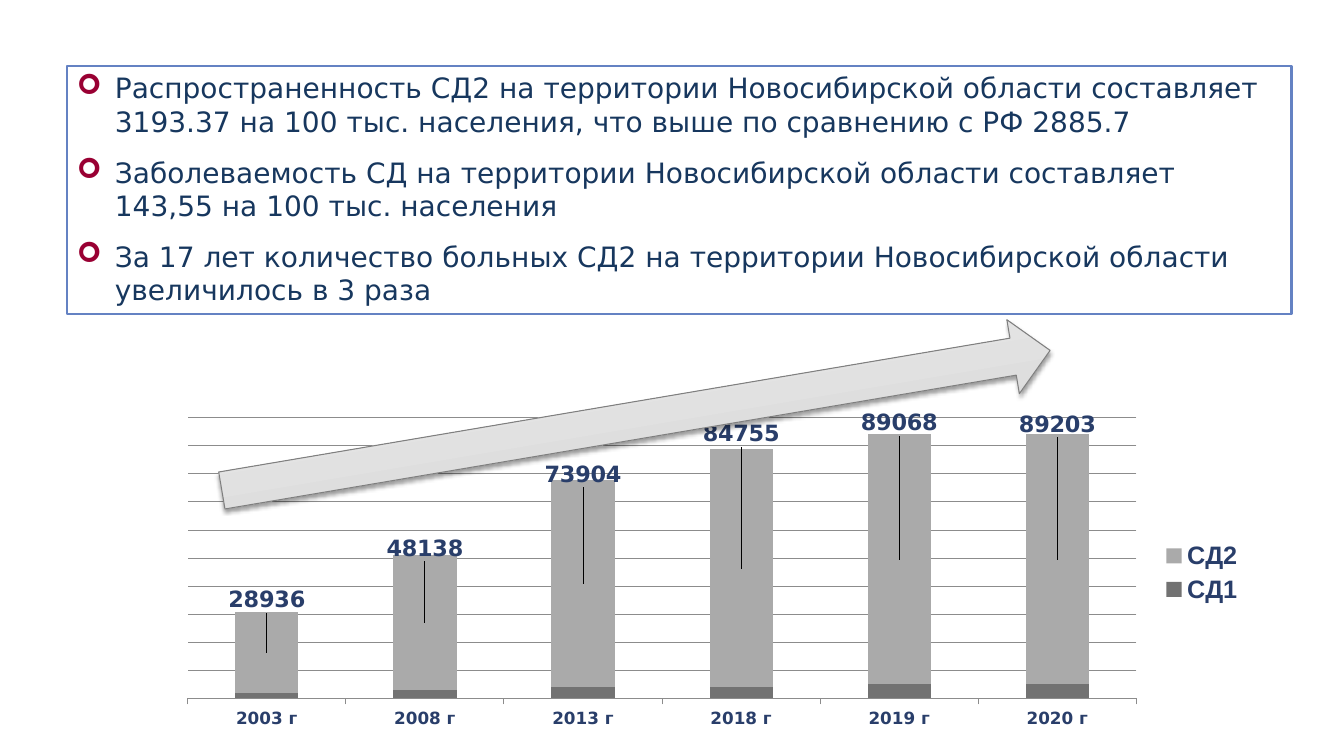
import copy
import pptx
import pptx.chart.data
import pptx.dml.color
import pptx.enum.chart
import pptx.enum.shapes
import pptx.enum.text
import pptx.oxml
import pptx.oxml.ns
import pptx.util

PX = 12192000 / 1344
SANS = "DejaVu Sans"
NAVY = "293E6A"
FACTS = [
    "Распространенность СД2 на территории Новосибирской области составляет "
    "3193.37 на 100 тыс. населения, что выше по сравнению с РФ 2885.7",
    "Заболеваемость СД на территории Новосибирской области составляет "
    "143,55 на 100 тыс. населения",
    "За 17 лет количество больных СД2 на территории Новосибирской области "
    "увеличилось в 3 раза",
]
YEARS = [2003, 2008, 2013, 2018, 2019, 2020]
TYPE1 = [2000, 3000, 4000, 4000, 5000, 5000]
TYPE2 = [28936, 48138, 73904, 84755, 89068, 89203]
GAPS = [11, 6, 5, 15, 11, 9]
TOP = 100000


def place(box):
    """Turn a box in px into EMU."""
    return [round(n * PX) for n in box]


def paint(text):
    """Turn a hex string into a colour."""
    return pptx.dml.color.RGBColor.from_string(text)


def node(tag, body="", **attrs):
    """Build an XML element from its tag, content and attributes."""
    pairs = "".join(f' {key}="{val}"' for key, val in attrs.items())
    names = pptx.oxml.ns.nsdecls("a", "c")
    return pptx.oxml.parse_xml(f"<{tag} {names}{pairs}>{body}</{tag}>")


def style(font, size, color, name=SANS, bold=False):
    """Set the look of a font."""
    font.size = pptx.util.Pt(size)
    font.name = name
    font.bold = bold
    font.color.rgb = paint(color)


def write(para, text, mark, **look):
    """Write one bulleted paragraph."""
    para.alignment = pptx.enum.text.PP_ALIGN.LEFT
    para.space_before = para.space_after = pptx.util.Pt(6)
    props = para._p.get_or_add_pPr()
    props.set("marL", str(round(38 * PX)))
    props.set("indent", str(round(-38 * PX)))
    props.append(node("a:buClr", f'<a:srgbClr val="{mark}"/>'))
    props.append(node("a:buFont", typeface="Wingdings"))
    props.append(node("a:buChar", char="➢"))
    run = para.add_run()
    run.text = text
    style(run.font, **look)


def frame(slide, box):
    """Draw the framed list of facts."""
    rect = slide.shapes.add_shape(
        pptx.enum.shapes.MSO_SHAPE.RECTANGLE, *place(box))
    rect.shadow.inherit = False
    rect.fill.solid()
    rect.fill.fore_color.rgb = paint("FFFFFF")
    rect.line.color.rgb = paint("6482C3")
    rect.line.width = pptx.util.Pt(2)
    body = rect.text_frame
    body.word_wrap = True
    body.vertical_anchor = pptx.enum.text.MSO_ANCHOR.TOP
    for num, fact in enumerate(FACTS):
        para = body.add_paragraph() if num else body.paragraphs[0]
        write(para, fact, "990033", size=20, color="17375E")


def layout(**parts):
    """Build a manual chart layout."""
    body = "".join(f'<c:{key} val="{val}"/>' for key, val in parts.items())
    return node("c:layout", f"<c:manualLayout>{body}</c:manualLayout>")


def label(series, box, rise):
    """Lift each value label above its column."""
    labels = series.data_labels
    labels.show_value = True
    style(labels.font, 16, NAVY, bold=True)
    for num, (value, gap) in enumerate(zip(TYPE2, GAPS)):
        tag = series.points[num].data_label
        tag.position = pptx.enum.chart.XL_LABEL_POSITION.CENTER
        style(tag.font, 16, NAVY, bold=True)
        lift = value / TOP * rise / 2 + gap
        item = labels._element.findall(pptx.oxml.ns.qn("c:dLbl"))[num]
        item.insert(1, layout(x=0, y=round(-lift / box[3], 3)))


def graph(slide, box):
    """Draw the stacked columns by year."""
    data = pptx.chart.data.CategoryChartData()
    data.categories = [f"{year} г" for year in YEARS]
    data.add_series("СД1", TYPE1)
    data.add_series("СД2", TYPE2)
    kind = pptx.enum.chart.XL_CHART_TYPE.COLUMN_STACKED
    chart = slide.shapes.add_chart(kind, *place(box), data).chart
    style(chart.font, 18, "5A5A5A", name="Arial")
    chart.has_title = False
    chart.has_legend = True
    chart.legend.position = pptx.enum.chart.XL_LEGEND_POSITION.RIGHT
    chart.legend.include_in_layout = False
    style(chart.legend.font, 18, NAVY, name="Arial", bold=True)

    plot = chart.plots[0]
    plot.gap_width = 150
    plot.overlap = 100
    plot.vary_by_categories = False
    for series, color in zip(plot.series, ["727272", "AAAAAA"]):
        series.format.fill.solid()
        series.format.fill.fore_color.rgb = paint(color)
    rise = 281
    label(plot.series[1], box, rise)

    years = chart.category_axis
    style(years.tick_labels.font, 12, NAVY, bold=True)
    years.major_tick_mark = pptx.enum.chart.XL_TICK_MARK.OUTSIDE
    scale = chart.value_axis
    scale.visible = False
    scale.minimum_scale = 0
    scale.maximum_scale = TOP
    scale.major_unit = TOP / 10
    scale.has_major_gridlines = True
    for line in (years.format.line, scale.major_gridlines.format.line):
        line.color.rgb = paint("8C8C8C")
        line.width = pptx.util.Pt(0.75)

    area = chart._chartSpace.chart.plotArea
    for old in area.findall(pptx.oxml.ns.qn("c:layout")):
        area.remove(old)
    area.insert(0, layout(
        layoutTarget="inner", xMode="edge", yMode="edge",
        x=0.02, y=0.02, w=round(949 / box[2], 3), h=round(rise / box[3], 3)))


def arrow(slide, box):
    """Draw the rising arrow."""
    shape = slide.shapes.add_shape(
        pptx.enum.shapes.MSO_SHAPE.RIGHT_ARROW, *place(box))
    shape.rotation = 350.4
    shape.line.color.rgb = paint("7F7F7F")
    shape.line.width = pptx.util.Pt(0.75)
    fill = shape.fill
    fill.gradient()
    fill.gradient_angle = 90
    stops = shape._element.spPr.find(".//" + pptx.oxml.ns.qn("a:gsLst"))
    stops.insert(1, copy.deepcopy(stops[0]))
    tones = [(0, "CDCDCD"), (0.35, "DCDCDC"), (1, "F1F1F1")]
    for stop, (spot, color) in zip(fill.gradient_stops, tones):
        stop.position = spot
        stop.color.rgb = paint(color)
    shape.shadow.inherit = False
    glow = node(
        "a:outerShdw",
        '<a:srgbClr val="000000"><a:alpha val="38000"/></a:srgbClr>',
        blurRad=pptx.util.Pt(3.1), dist=pptx.util.Pt(1.6),
        dir=5400000, rotWithShape=0)
    shape._element.spPr.find(pptx.oxml.ns.qn("a:effectLst")).append(glow)


def main():
    """Build and save the slide."""
    deck = pptx.Presentation()
    deck.slide_width, deck.slide_height = place((1344, 756))
    slide = deck.slides.add_slide(deck.slide_layouts[6])
    frame(slide, (67, 66, 1225, 248))
    graph(slide, (166, 411, 1088, 323))
    arrow(slide, (216, 383, 840, 75))
    deck.save("out.pptx")


if __name__ == "__main__":
    main()
